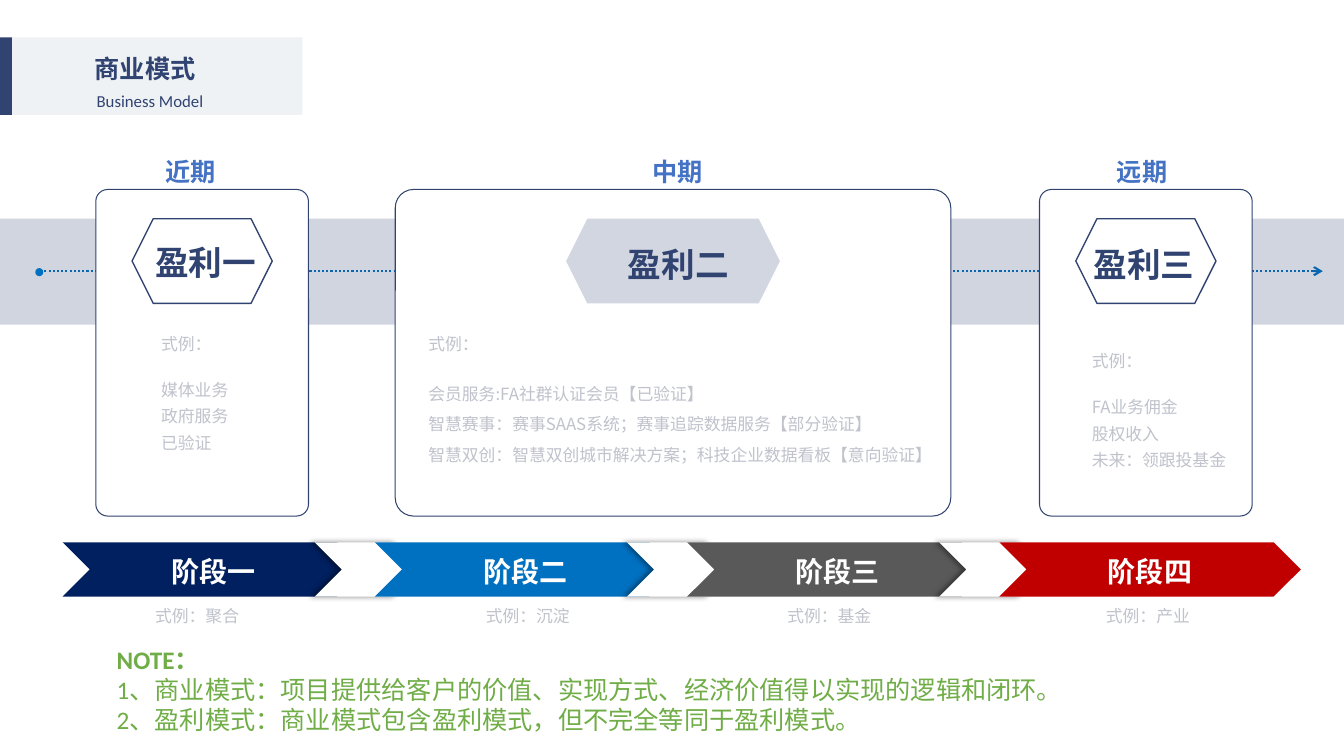
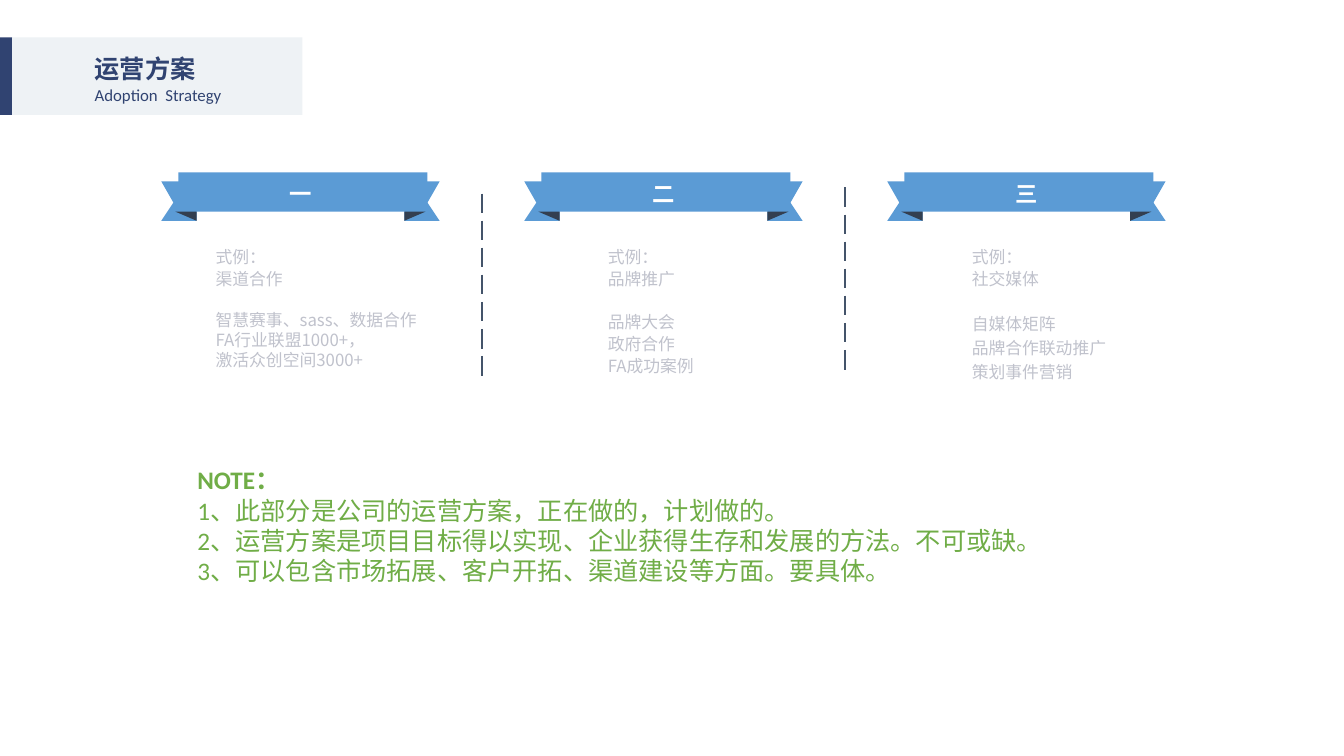
from dataclasses import dataclass

from lxml import etree
from pptx import Presentation
from pptx.dml.color import RGBColor
from pptx.enum.dml import MSO_LINE
from pptx.enum.shapes import MSO_CONNECTOR, MSO_SHAPE
from pptx.enum.text import MSO_ANCHOR, PP_ALIGN
from pptx.oxml.ns import qn
from pptx.util import Inches, Pt

RECT, ROUNDED, HEXAGON = MSO_SHAPE.RECTANGLE, MSO_SHAPE.ROUNDED_RECTANGLE, MSO_SHAPE.HEXAGON
CHEVRON, DOT = MSO_SHAPE.CHEVRON, MSO_SHAPE.FLOWCHART_CONNECTOR
STRAIGHT = MSO_CONNECTOR.STRAIGHT
DOTTED, LONG_DASH = MSO_LINE.ROUND_DOT, MSO_LINE.LONG_DASH
LEFT, CENTER, MIDDLE = PP_ALIGN.LEFT, PP_ALIGN.CENTER, MSO_ANCHOR.MIDDLE


@dataclass(frozen=True)
class Theme:
    navy: str = "304371"
    panel: str = "EEF2F5"
    white: str = "FFFFFF"
    pale: str = "D2D6E0"
    blue: str = "0070C0"
    period: str = "4472C4"
    grey: str = "C0C2CC"
    green: str = "70AD47"
    ribbon: str = "5B9BD5"
    fold: str = "333F50"
    divider: str = "44546A"
    head_font: str = "Noto Sans CJK SC"
    body_font: str = "Noto Sans CJK JP"
    latin_font: str = "Calibri"
    small: int = 12
    ribbon_size: int = 16
    medium: int = 18
    stage_size: int = 20
    large: int = 24
    body_line: float = 1.2
    head_line: float = 1.3


T = Theme()

# Period, its left, card left and width, headline, its left and top
CARDS = [
    ("近期", 1.54, 0.95, 2.11, "盈利一", 1.44, 2.32),
    ("中期", 6.37, 3.92, 5.51, "盈利二", 6.13, 2.34),
    ("远期", 10.98, 10.31, 2.11, "盈利三", 10.75, 2.34),
]
FILLED_CARD = 1
# Box, line spacing, lead lines, points
CARD_BODIES = [
    ((1.5, 3.26, 2.32, 1.7), 1.3, ["式例："], ["媒体业务", "政府服务", "已验证"]),
    ((4.15, 3.26, 5.25, 1.62), 1.5, ["式例："], [
        "会员服务:FA社群认证会员【已验证】",
        "智慧赛事：赛事SAAS系统；赛事追踪数据服务【部分验证】",
        "智慧双创：智慧双创城市解决方案；科技企业数据看板【意向验证】"]),
    ((10.73, 3.43, 1.58, 1.29), 1.3, ["式例："],
     ["FA业务佣金", "股权收入", "未来：领跟投基金"]),
]
STAGES = [
    ("阶段一", "002060", "式例：聚合", 1.44),
    ("阶段二", T.blue, "式例：沉淀", 4.72),
    ("阶段三", "595959", "式例：基金", 7.71),
    ("阶段四", "C00000", "式例：产业", 10.87),
]
MODEL_NOTES = [
    "1、商业模式：项目提供给客户的价值、实现方式、经济价值得以实现的逻辑和闭环。",
    "2、盈利模式：商业模式包含盈利模式，但不完全等同于盈利模式。",
]

RIBBONS = ["一", "二", "三"]
STRATEGY_BODIES = [
    ((2.04, 2.4, 2.38, 1.31), 1, ["式例：", "渠道合作"],
     ["智慧赛事、sass、数据合作", "FA行业联盟1000+，", "激活众创空间3000+"]),
    ((5.93, 2.4, 1.78, 1.37), 1.1, ["式例：", "品牌推广"],
     ["品牌大会", "政府合作", "FA成功案例"]),
    ((9.54, 2.4, 1.78, 1.43), 1.2, ["式例：", "社交媒体"],
     ["自媒体矩阵", "品牌合作联动推广", "策划事件营销"]),
]
DIVIDER_TOPS = [1.92, 1.86]
STRATEGY_NOTES = [
    "1、此部分是公司的运营方案，正在做的，计划做的。",
    "2、运营方案是项目目标得以实现、企业获得生存和发展的方法。不可或缺。",
    "3、可以包含市场拓展、客户开拓、渠道建设等方面。要具体。",
]


def color(value):
    return RGBColor.from_string(value)


def paint(shape, fill=None, line=None, width=1):
    shape.shadow.inherit = False
    if fill:
        shape.fill.solid()
        shape.fill.fore_color.rgb = color(fill)
    else:
        shape.fill.background()
    if line:
        shape.line.color.rgb = color(line)
        shape.line.width = Pt(width)
    else:
        shape.line.fill.background()
    return shape


def add_shape(page, kind, box, fill=None, line=None, width=1):
    shape = page.shapes.add_shape(kind, *map(Inches, box))
    return paint(shape, fill, line, width)


def add_line(page, start, end, line, width, dash):
    connector = page.shapes.add_connector(STRAIGHT, *map(Inches, start + end))
    connector.line.color.rgb = color(line)
    connector.line.width = Pt(width)
    connector.line.dash_style = dash
    etree.SubElement(connector._element.spPr, qn("a:effectLst"))
    return connector


def add_para(frame, text, size, fill, font, bold=False, align=LEFT,
             spacing=T.body_line, before=0):
    """Add a paragraph whose line height is a multiple of its type size."""
    para = frame.paragraphs[0]
    if para.runs:
        para = frame.add_paragraph()
    para.alignment = align
    para.line_spacing = Pt(size * spacing)
    para.space_before = Pt(before)
    span = para.add_run()
    span.text = text
    span.font.size, span.font.bold, span.font.name = Pt(size), bold, font
    span.font.color.rgb = color(fill)
    east = etree.SubElement(span.font._element, qn("a:ea"))
    east.set("typeface", T.head_font if font == T.latin_font else font)


def add_box(page, box):
    frame = page.shapes.add_textbox(*map(Inches, box)).text_frame
    frame.word_wrap = True
    return frame


def add_heading(page, box, text, size, fill, font):
    add_para(add_box(page, box), text, size, fill, font, True, spacing=T.head_line)


def label_shape(shape, text, size):
    frame = shape.text_frame
    frame.margin_left = frame.margin_right = frame.margin_top = frame.margin_bottom = 0
    frame.vertical_anchor = MIDDLE
    add_para(frame, text, size, T.white, T.head_font, True, CENTER, T.head_line)


def add_body(page, box, spacing, leads, points):
    frame = add_box(page, box)
    style = (T.small, T.grey, T.body_font)
    for index, text in enumerate(leads):
        add_para(frame, text, *style, spacing=T.body_line * (1.1 if index else 1))
    for index, text in enumerate(points):
        add_para(frame, text, *style, spacing=T.body_line * spacing,
                 before=0 if index else T.small * T.body_line)


def add_notes(page, box, lines):
    frame = add_box(page, box)
    for index, text in enumerate(["NOTE："] + lines):
        add_para(frame, text, T.medium, T.green, T.latin_font, bold=index == 0)


def new_page(deck, title, subtitle, left, top):
    """Add a page with the title band; left and top place the subtitle."""
    page = deck.slides.add_slide(deck.slide_layouts[6])
    add_shape(page, RECT, (-0.02, 0.37, 0.14, 0.77), T.navy)
    add_shape(page, RECT, (0.12, 0.37, 2.88, 0.77), T.panel)
    add_heading(page, (0.84, 0.45, 1.3, 0.4), title, T.medium, T.navy, T.head_font)
    add_para(add_box(page, (left, top, 1.69, 0.3)), subtitle, T.small, T.navy, T.latin_font)
    return page


def add_timeline(page):
    arrow = add_line(page, (0.44, 2.69), (13.12, 2.69), T.blue, 1.5, DOTTED)
    etree.SubElement(arrow.line._get_or_add_ln(), qn("a:tailEnd")).set("type", "arrow")
    band = add_shape(page, RECT, (-0.01, 2.17, 13.4, 1.05), T.navy)
    tint = band._element.spPr.find(qn("a:solidFill")).find(qn("a:srgbClr"))
    etree.SubElement(tint, qn("a:alpha")).set("val", "22000")
    add_shape(page, DOT, (0.35, 2.66, 0.08, 0.08), T.blue)


def add_cards(page):
    for index, (period, period_left, left, width, name, name_left, name_top) in enumerate(CARDS):
        card = add_shape(page, ROUNDED, (left, 1.88, width, 3.24), T.white, T.navy, 0.75)
        card.adjustments[0] = 0.056
        filled = index == FILLED_CARD
        hex_width = 2.12 if filled else 1.39
        add_shape(page, HEXAGON, (left + (width - hex_width) / 2, 2.17, hex_width, 0.84),
                  T.pale if filled else None, None if filled else T.navy)
        add_heading(page, (name_left, name_top, 1.4, 0.5), name, T.large, T.navy, T.head_font)
        add_heading(page, (period_left, 1.48, 0.75, 0.4), period, T.medium, T.period,
                    T.latin_font)
    for body in CARD_BODIES:
        add_body(page, *body)


def add_gap_shadow(shape):
    effects = shape._element.spPr.find(qn("a:effectLst"))
    shadow = etree.SubElement(effects, qn("a:outerShdw"), blurRad=str(Pt(4)),
                              dist=str(Pt(3)), dir="10800000", rotWithShape="0")
    tint = etree.SubElement(shadow, qn("a:srgbClr"), val="000000")
    etree.SubElement(tint, qn("a:alpha"), val="40000")


def add_stages(page):
    first, pitch, top, height = 0.62, 3.097, 5.38, 0.54
    for index, (name, fill, example, example_left) in enumerate(STAGES):
        left = first + index * pitch
        stage = add_shape(page, CHEVRON, (left, top, 2.99, height), fill)
        label_shape(stage, name, T.stage_size)
        if index < len(STAGES) - 1:
            add_gap_shadow(add_shape(page, CHEVRON, (left + 2.5, top, 1.08, height), T.white))
        add_para(add_box(page, (example_left, 5.96, 2.09, 0.3)), example,
                 T.small, T.grey, T.body_font)


def add_outline(page, points, fill):
    spots = [(Inches(x), Inches(y)) for x, y in points]
    builder = page.shapes.build_freeform(*spots[0])
    builder.add_line_segments(spots[1:], close=True)
    paint(builder.convert_to_shape(), fill)


def add_ribbon(page, middle, text):
    band = add_shape(page, RECT, (middle - 1.21, 1.71, 2.47, 0.39), T.ribbon)
    label_shape(band, text, T.ribbon_size)
    band.text_frame.margin_right = Inches(0.05)
    tail = [(1.03, 2.19), (1.38, 2.19), (1.26, 2.01), (1.38, 1.8), (1.03, 1.8)]
    fold = [(1.24, 2.1), (1.03, 2.19), (1.03, 2.1)]
    for side in (-1, 1):
        for points, fill in ((tail, T.ribbon), (fold, T.fold)):
            add_outline(page, [(middle + side * x, y) for x, y in points], fill)


def build_model(deck):
    page = new_page(deck, "商业模式", "Business Model", 0.86, 0.85)
    add_timeline(page)
    add_cards(page)
    add_stages(page)
    add_notes(page, (1.06, 6.34, 11.36, 1.01), MODEL_NOTES)


def build_strategy(deck):
    page = new_page(deck, "运营方案", "Adoption  Strategy", 0.84, 0.79)
    pitch = 3.6
    for index, text in enumerate(RIBBONS):
        add_ribbon(page, 2.98 + index * pitch, text)
    for index, top in enumerate(DIVIDER_TOPS):
        x = 4.78 + index * pitch
        add_line(page, (x, top), (x, top + 1.85), T.divider, 1.75, LONG_DASH)
    for body in STRATEGY_BODIES:
        add_body(page, *body)
    add_notes(page, (1.86, 4.56, 11.36, 1.31), STRATEGY_NOTES)


def main():
    deck = Presentation()
    deck.slide_width, deck.slide_height = Inches(13.33), Inches(7.5)
    build_model(deck)
    build_strategy(deck)
    deck.save("out.pptx")


if __name__ == "__main__":
    main()
